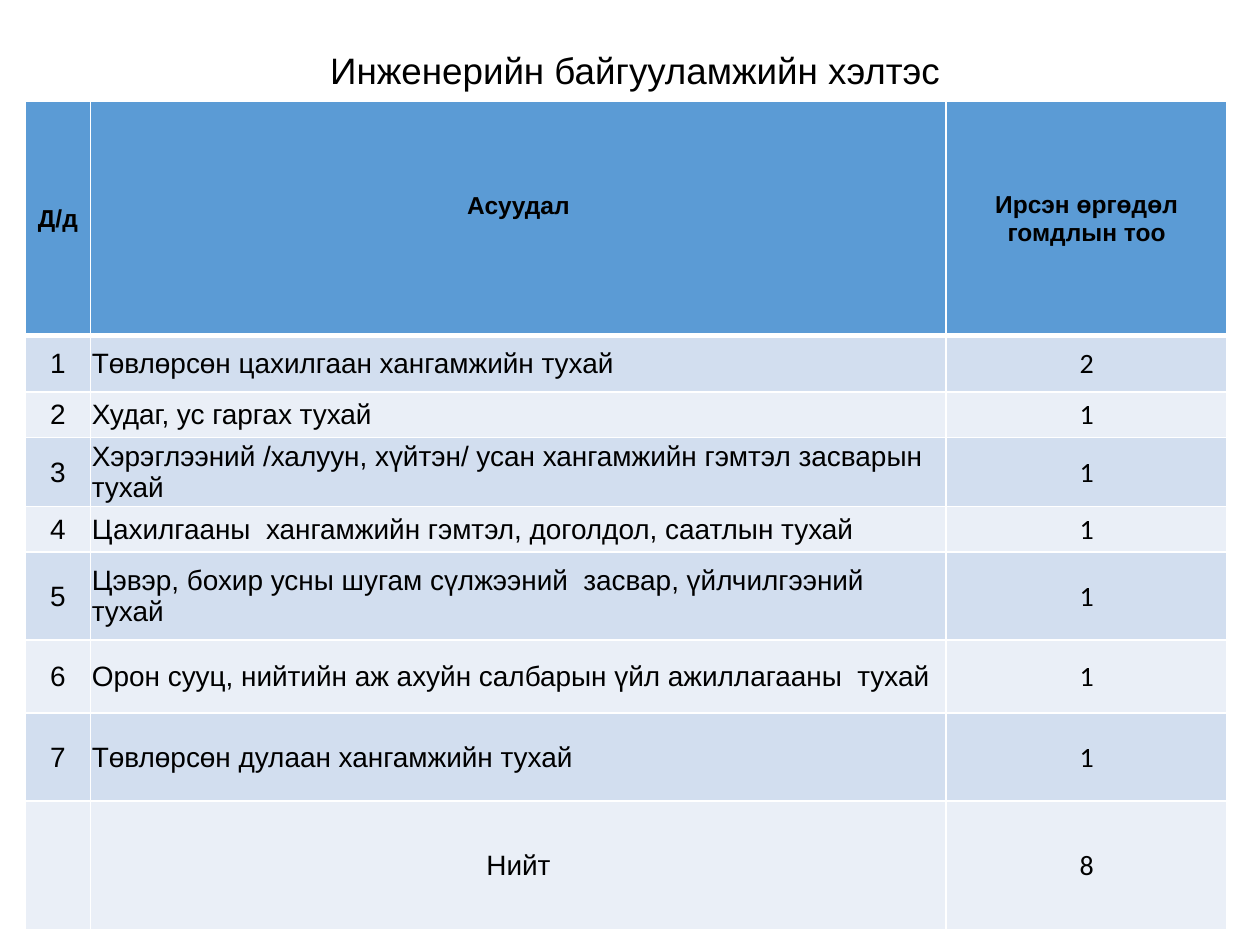
from dataclasses import dataclass
from lxml import etree
from pptx import Presentation
from pptx.dml.color import RGBColor
from pptx.enum.text import MSO_ANCHOR, PP_ALIGN
from pptx.oxml.ns import qn
from pptx.util import Inches, Pt

LEFT, CENTER = PP_ALIGN.LEFT, PP_ALIGN.CENTER
MIDDLE = MSO_ANCHOR.MIDDLE


@dataclass(frozen=True)
class Theme:
    ink: str = "000000"
    line: str = "FFFFFF"
    head: str = "5B9BD5"
    bands: tuple = ("D2DEEF", "EAEFF7")
    font: str = "Arial"
    digit: str = "Calibri"
    title: int = 21
    label: int = 14
    body: int = 16
    thin: int = 1
    thick: int = 3


TITLE = "Инженерийн байгууламжийн хэлтэс"
HEAD = ("Д/д", "Асуудал", "Ирсэн өргөдөл гомдлын тоо")
ISSUES = (
    ("Төвлөрсөн цахилгаан хангамжийн тухай", 2),
    ("Худаг, ус гаргах тухай", 1),
    ("Хэрэглээний /халуун, хүйтэн/ усан хангамжийн гэмтэл засварын тухай", 1),
    ("Цахилгааны  хангамжийн гэмтэл, доголдол, саатлын тухай", 1),
    ("Цэвэр, бохир усны шугам сүлжээний  засвар, үйлчилгээний  тухай", 1),
    ("Орон сууц, нийтийн аж ахуйн салбарын үйл ажиллагааны  тухай", 1),
    ("Төвлөрсөн дулаан хангамжийн тухай", 1),
)
COLS = (0.52, 6.79, 2.23)
ROWS = (1.86, 0.45, 0.36, 0.55, 0.36, 0.7, 0.58, 0.7, 1.02)


class Deck:
    def __init__(self, theme):
        self.theme = theme
        self.prs = Presentation()
        self.prs.slide_width, self.prs.slide_height = Inches(10), Inches(7.5)
        self.slide = self.prs.slides.add_slide(self.prs.slide_layouts[6])

    def area(self, x, y, w, h):
        """Turn shares of the slide into lengths."""
        wide, high = self.prs.slide_width, self.prs.slide_height
        return int(x * wide), int(y * high), int(w * wide), int(h * high)

    def label(self, frame, text, size, align=CENTER, font=None, bold=False):
        frame.text = text
        para = frame.paragraphs[0]
        para.alignment = align
        for run in para.runs:
            run.font.name = font or self.theme.font
            run.font.size = Pt(size)
            run.font.bold = bold
            run.font.color.rgb = RGBColor.from_string(self.theme.ink)

    def title(self, text, area):
        frame = self.slide.shapes.add_textbox(*self.area(*area)).text_frame
        frame.word_wrap = True
        frame.vertical_anchor = MIDDLE
        frame.margin_left = Inches(0.33)
        self.label(frame, text, self.theme.title)
        frame.paragraphs[0].line_spacing = 0.9

    def border(self, cell, top, bottom):
        thin = self.theme.thin
        sides = {"a:lnL": thin, "a:lnR": thin, "a:lnT": top, "a:lnB": bottom}
        props = cell._tc.get_or_add_tcPr()
        for side, width in sides.items():
            line = etree.SubElement(props, qn(side), w=str(Pt(width)))
            fill = etree.SubElement(line, qn("a:solidFill"))
            etree.SubElement(fill, qn("a:srgbClr"), val=self.theme.line)

    def cell(self, cell, row, fill):
        theme = self.theme
        cell.vertical_anchor = MIDDLE
        cell.margin_left = cell.margin_right = cell.margin_top = Inches(0.01)
        cell.margin_bottom = 0
        self.border(cell, theme.thick if row == 1 else theme.thin,
                    theme.thick if row == 0 else theme.thin)
        cell.fill.solid()
        cell.fill.fore_color.rgb = RGBColor.from_string(fill)

    def table(self, data, cols, rows, area):
        """Draw data with cols and rows as weights within the area."""
        theme = self.theme
        x, y, w, h = self.area(*area)
        table = self.slide.shapes.add_table(
            len(rows), len(cols), x, y, w, h).table
        for col, part in zip(table.columns, cols):
            col.width = int(w * part / sum(cols))
        for row, part in zip(table.rows, rows):
            row.height = int(h * part / sum(rows))
        last = len(data) - 1
        for r, line in enumerate(data):
            fill = theme.bands[(r - 1) % 2] if r else theme.head
            for c, text in enumerate(line):
                cell = table.cell(r, c)
                self.cell(cell, r, fill)
                self.label(
                    cell.text_frame, text,
                    size=theme.body if r else theme.label,
                    align=LEFT if c == 1 and 0 < r < last else CENTER,
                    font=theme.digit if c == 2 and r else theme.font,
                    bold=r == 0)
        return table


def main():
    deck = Deck(Theme())
    deck.title(TITLE, (0.014, 0.025, 0.957, 0.104))
    body = [(str(n), text, str(count))
            for n, (text, count) in enumerate(ISSUES, 1)]
    total = ("", "Нийт", str(sum(count for _, count in ISSUES)))
    table = deck.table([HEAD, *body, total], COLS, ROWS,
                       (0.02, 0.107, 0.954, 0.877))
    table.cell(0, 1).margin_bottom = Inches(0.2)
    deck.prs.save("out.pptx")


if __name__ == "__main__":
    main()
